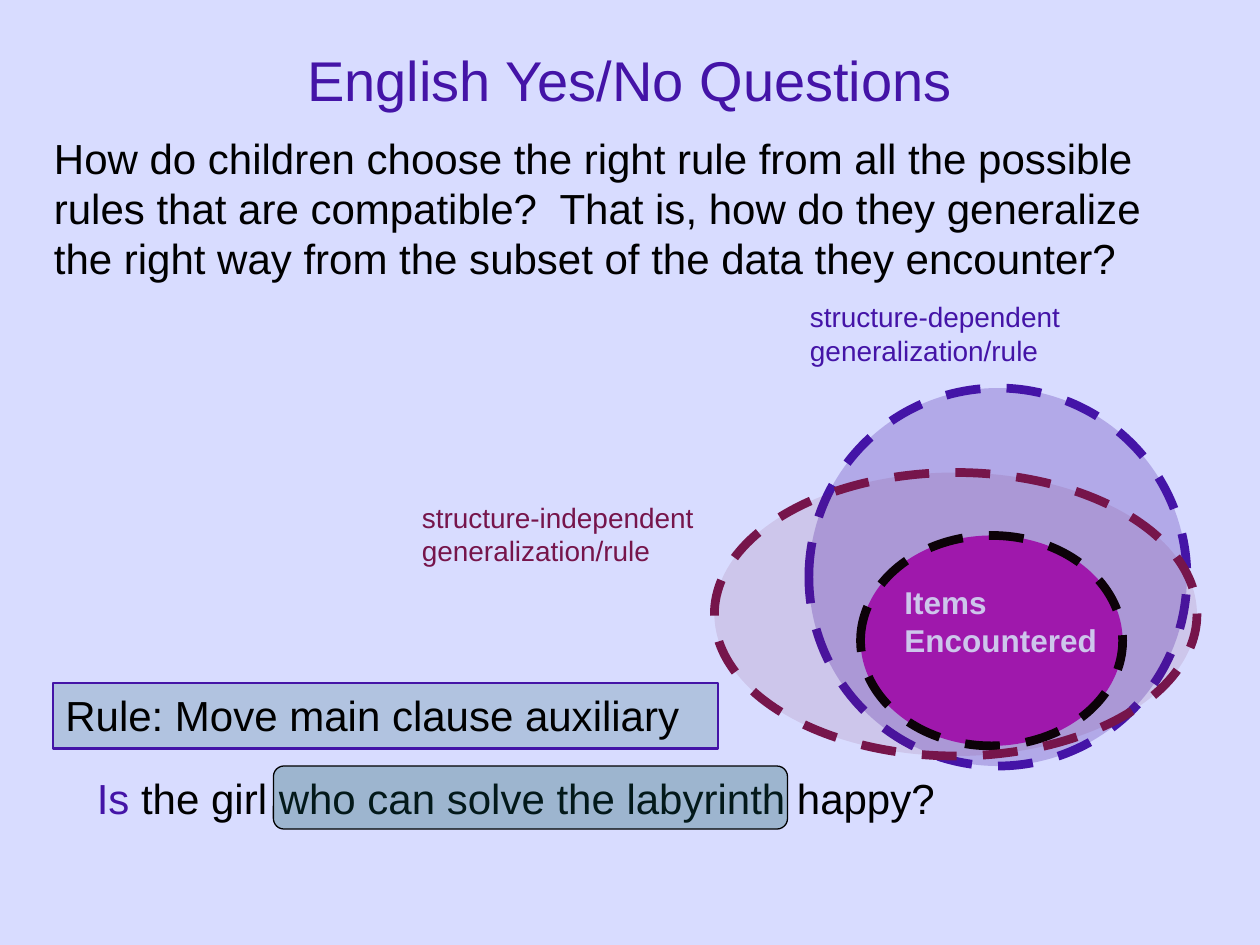
from lxml.etree import SubElement
from pptx import Presentation
from pptx.dml.color import RGBColor
from pptx.enum.dml import MSO_LINE_DASH_STYLE as Dash
from pptx.enum.shapes import MSO_SHAPE as Shape
from pptx.enum.text import MSO_ANCHOR as Anchor, PP_ALIGN as Align
from pptx.oxml.ns import qn
from pptx.util import Inches, Pt

FONT = "Arial"
INDIGO, MAROON, BLACK = "4414A7", "76154B", "000000"
TEAL, PURPLE, PALE = "0D585D", "A519B9", "D8DCFF"

TITLE = [[("English Yes/No Questions", INDIGO)]]
RULE = [[("Rule: Move main clause auxiliary", BLACK)]]
EXAMPLE = [[("Is", INDIGO),
            (" the girl who can solve the labyrinth happy?", BLACK)]]
QUESTION = [[("How do children choose the right rule from all the possible "
              "rules that are compatible?  That is, how do they generalize "
              "the right way from the subset of the data they encounter?",
              BLACK)]]
ITEMS = [[("Items Encountered", PALE)]]
DEPENDENT = [[("structure-dependent generalization/rule", INDIGO)]]
INDEPENDENT = [[("structure-independent", MAROON)],
               [("generalization/rule", MAROON)]]


def rgb(value):
    """Return the colour for a hex string."""
    return RGBColor.from_string(value)


def write(shape, paragraphs, size, bold=False, wrap=True,
          align=Align.LEFT, anchor=Anchor.TOP):
    """Fill a shape with paragraphs of coloured spans."""
    frame = shape.text_frame
    frame.word_wrap = wrap
    frame.vertical_anchor = anchor
    for index, spans in enumerate(paragraphs):
        para = frame.add_paragraph() if index else frame.paragraphs[0]
        para.alignment = align
        for text, color in spans:
            span = para.add_run()
            span.text = text
            span.font.name = FONT
            span.font.size = Pt(size)
            span.font.bold = bold
            span.font.color.rgb = rgb(color)


def add_text(page, at, paragraphs, size, **style):
    """Add a text box."""
    box = page.shapes.add_textbox(*map(Inches, at))
    write(box, paragraphs, size, **style)


def add_panel(page, kind, at, fill, opacity, line, width):
    """Add a filled and outlined shape with the given opacity in percent."""
    panel = page.shapes.add_shape(kind, *map(Inches, at))
    panel.shadow.inherit = False
    panel.fill.solid()
    panel.fill.fore_color.rgb = rgb(fill)
    if opacity < 100:
        color = panel.fill._xPr.find(".//" + qn("a:srgbClr"))
        SubElement(color, qn("a:alpha"), val=str(opacity * 1000))
    panel.line.color.rgb = rgb(line)
    panel.line.width = Pt(width)
    return panel


def add_set(page, at, fill, opacity, line):
    """Add a dashed ellipse of the set diagram."""
    ellipse = add_panel(page, Shape.OVAL, at, fill, opacity, line, 5)
    ellipse.line.dash_style = Dash.DASH


def main():
    """Build the slide and save it."""
    deck = Presentation()
    deck.slide_width, deck.slide_height = Inches(10), Inches(7.5)
    page = deck.slides.add_slide(deck.slide_layouts[6])
    page.background.fill.solid()
    page.background.fill.fore_color.rgb = rgb(PALE)

    add_text(page, (0, 0, 10, 1.25), TITLE, 32,
             align=Align.CENTER, anchor=Anchor.MIDDLE)
    rule = add_panel(page, Shape.RECTANGLE, (0.42, 5.42, 5.28, 0.52),
                     TEAL, 19, INDIGO, 1.25)
    write(rule, RULE, 24, wrap=False)
    add_text(page, (0.67, 6.08, 9.33, 0.5), EXAMPLE, 24)
    add_text(page, (0.33, 1, 9.17, 1.3), QUESTION, 24)
    add_panel(page, Shape.ROUNDED_RECTANGLE, (2.17, 6.08, 4.08, 0.5),
              TEAL, 29, BLACK, 0.75)

    add_set(page, (6.42, 3.08, 3, 3), INDIGO, 25, INDIGO)
    add_set(page, (6.83, 4.25, 2.08, 1.67), PURPLE, 100, BLACK)
    add_text(page, (7.08, 4.58, 1.75, 0.7), ITEMS, 18, bold=True)
    add_text(page, (6.33, 2.33, 3.09, 0.64), DEPENDENT, 16)
    add_set(page, (5.67, 3.75, 3.83, 2.25), MAROON, 11, MAROON)
    add_text(page, (3.25, 3.92, 2.36, 0.64), INDEPENDENT, 16, wrap=False)
    deck.save("out.pptx")


if __name__ == "__main__":
    main()
